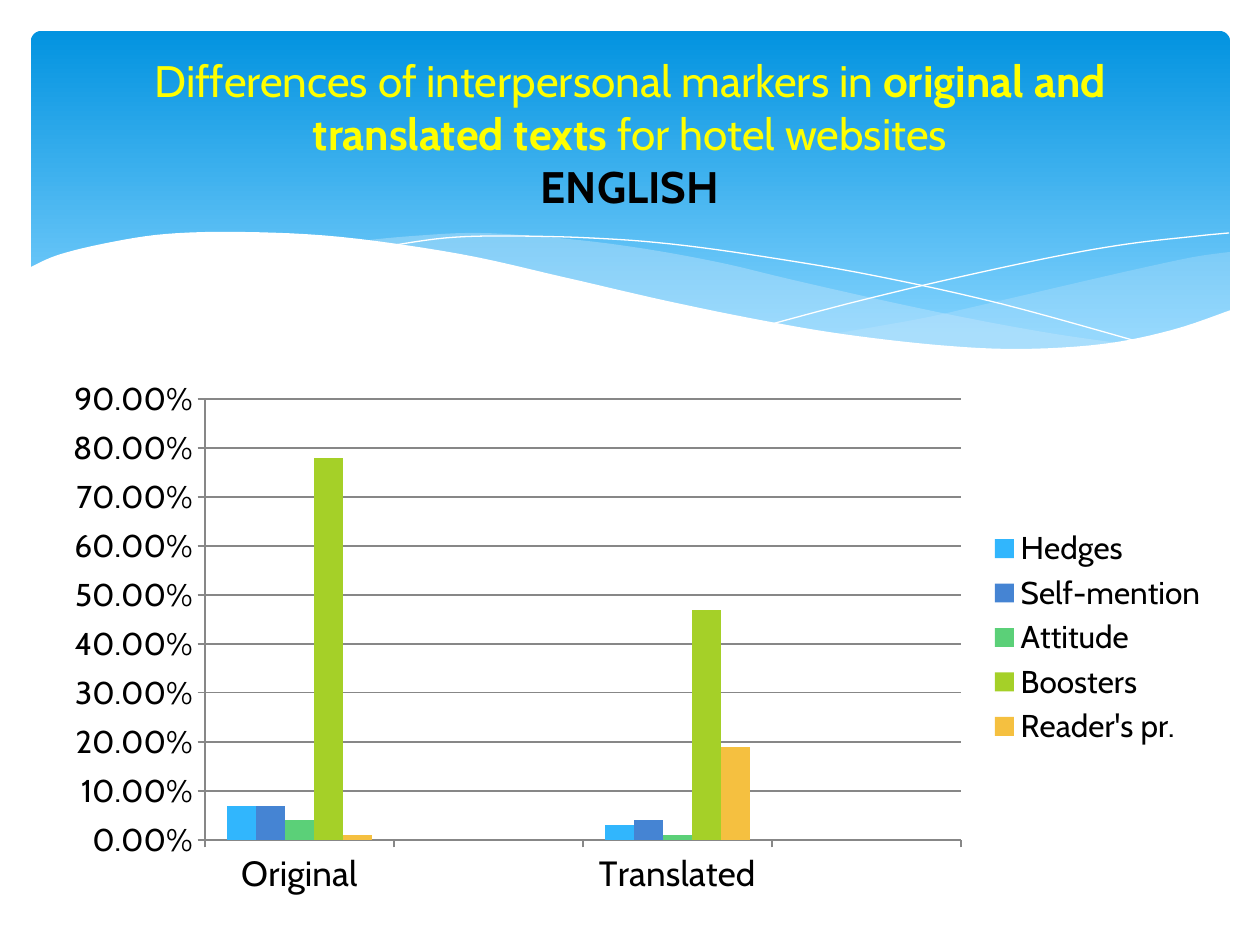
from lxml.etree import SubElement
from pptx import Presentation
from pptx.chart.data import CategoryChartData
from pptx.dml.color import RGBColor
from pptx.enum.chart import XL_CHART_TYPE as ChartType, XL_LEGEND_POSITION as LegendPosition
from pptx.enum.chart import XL_TICK_MARK as TickMark
from pptx.enum.shapes import MSO_SHAPE as Shape
from pptx.enum.text import MSO_ANCHOR as Anchor, MSO_AUTO_SIZE as AutoSize, PP_ALIGN as Align
from pptx.oxml import parse_xml
from pptx.oxml.ns import nsdecls, qn
from pptx.util import Pt

PX = 9144000 / 1260
FONT = "Cabin"
WHITE = RGBColor(0xFF, 0xFF, 0xFF)
BLACK = RGBColor(0, 0, 0)
YELLOW = RGBColor(0xFF, 0xFF, 0)
GREY = RGBColor(0x87, 0x87, 0x87)
BANNER_TOP = RGBColor(0x02, 0x93, 0xE0)
BANNER_BOTTOM = RGBColor(0x83, 0xD3, 0xFE)
PALE_BLUE = RGBColor(0xC6, 0xE7, 0xFC)
BLUE = RGBColor(0x31, 0xB6, 0xFD)
INDIGO = RGBColor(0x45, 0x84, 0xD3)
GREEN = RGBColor(0x5B, 0xD0, 0x78)
LIME = RGBColor(0xA5, 0xD0, 0x28)
AMBER = RGBColor(0xF5, 0xC0, 0x40)


def box(*lengths):
    return [round(length * PX) for length in lengths]


def smooth_curve(knots, steps=6):
    padded = [knots[0], *knots, knots[-1]]
    points = [knots[0]]
    for a, b, c, d in zip(padded, padded[1:], padded[2:], padded[3:]):
        for step in range(1, steps + 1):
            t = step / steps
            points.append(tuple(
                (2 * q + (r - p) * t + (2 * p - 5 * q + 4 * r - s) * t**2
                 + (3 * q - p - 3 * r + s) * t**3) / 2
                for p, q, r, s in zip(a, b, c, d)))
    return points


presentation = Presentation()
presentation.slide_width, presentation.slide_height = box(1260, 945)
slide = presentation.slides.add_slide(presentation.slide_layouts[5])
shapes = slide.shapes

banner = shapes.add_shape(Shape.ROUNDED_RECTANGLE, *box(31, 31, 1199, 340))
banner.adjustments[0] = 0.03
banner.shadow.inherit = False
banner.line.fill.background()
banner.fill.gradient()
banner.fill.gradient_angle = 270
for stop, color, position in zip(banner.fill.gradient_stops, (BANNER_TOP, BANNER_BOTTOM), (0, 0.9)):
    stop.color.rgb = color
    stop.position = position

right_top = [(833, 334), (919, 319), (982, 305), (1085, 281), (1142, 268), (1194, 257), (1230, 252)]
right_bottom = [(1230, 311), (1178, 330), (1130, 340), (1063, 349), (1012, 350),
                (939, 346), (871, 339), (833, 334)]
middle_top = [(360, 241), (413, 236), (479, 233), (557, 238), (633, 247), (717, 262),
              (793, 280), (890, 302), (977, 320), (1055, 334), (1125, 344)]
middle_bottom = [(1125, 344), (1056, 350), (989, 350), (910, 345), (819, 333), (713, 312),
                 (619, 292), (538, 272), (456, 256), (360, 241)]
falling_line = [(389, 246), (445, 238), (505, 236), (591, 238), (671, 244), (766, 257),
                (876, 276), (1002, 304), (1143, 343)]
rising_line = [(772, 324), (847, 304), (942, 281), (1053, 257), (1128, 244), (1198, 236), (1229, 233)]
front_top = [(29, 268), (58, 255), (107, 243), (166, 234), (243, 232), (341, 237), (460, 254),
             (563, 277), (667, 301), (760, 320), (842, 334), (937, 345), (1019, 349),
             (1103, 344), (1172, 330), (1231, 310)]

waves = [
    (smooth_curve(right_top) + smooth_curve(right_bottom), PALE_BLUE, 29),
    (smooth_curve(middle_top) + smooth_curve(middle_bottom), PALE_BLUE, 40),
    (smooth_curve(falling_line), None, 100),
    (smooth_curve(rising_line), None, 100),
    (smooth_curve(front_top) + [(1231, 414), (29, 414)], WHITE, 100),
]
for points, color, opacity in waves:
    start, *rest = [box(*point) for point in points]
    builder = shapes.build_freeform(*start)
    builder.add_line_segments(rest, close=color is not None)
    wave = builder.convert_to_shape()
    wave.shadow.inherit = False
    if color is None:
        wave.fill.background()
        wave.line.color.rgb = WHITE
        wave.line.width = Pt(0)
        continue
    wave.line.fill.background()
    wave.fill.solid()
    wave.fill.fore_color.rgb = color
    if opacity < 100:
        color_element = wave.element.spPr.find(qn("a:solidFill"))[0]
        SubElement(color_element, qn("a:alpha"), val=str(opacity * 1000))

chart_data = CategoryChartData(number_format="0.00%")
chart_data.categories = ["Original", "", "Translated", ""]
series_rows = [
    ("Hedges", 0.07, 0.03, BLUE),
    ("Self-mention", 0.07, 0.04, INDIGO),
    ("Attitude", 0.04, 0.01, GREEN),
    ("Boosters", 0.78, 0.47, LIME),
    ("Reader's pr.", 0.01, 0.19, AMBER),
]
for name, original, translated, color in series_rows:
    chart_data.add_series(name, [original, None, translated, None])
chart = shapes.add_chart(ChartType.COLUMN_CLUSTERED, *box(49, 369, 1172, 537), chart_data).chart
chart.has_title = False
chart.font.name = FONT
chart.font.size = Pt(18)
chart.font.color.rgb = BLACK
chart.has_legend = True
chart.legend.position = LegendPosition.RIGHT
chart.legend.include_in_layout = False

plot = chart.plots[0]
plot.vary_by_categories = False
plot.gap_width = 150
plot.overlap = 0
for series, row in zip(plot.series, series_rows):
    series.format.fill.solid()
    series.format.fill.fore_color.rgb = row[-1]
    series.invert_if_negative = False

value_axis = chart.value_axis
value_axis.minimum_scale = 0
value_axis.maximum_scale = 0.9
value_axis.major_unit = 0.1
value_axis.tick_labels.number_format = "0.00%"
value_axis.tick_labels.number_format_is_linked = False
value_axis.has_major_gridlines = True
value_axis.major_gridlines.format.line.color.rgb = GREY
chart.category_axis.tick_labels.font.size = Pt(20)
for axis in (value_axis, chart.category_axis):
    axis.major_tick_mark = TickMark.OUTSIDE
    axis.format.line.color.rgb = GREY

plot_area = chart.element.find(".//" + qn("c:plotArea"))
for layout in plot_area.findall(qn("c:layout")):
    plot_area.remove(layout)
plot_area.insert(0, parse_xml(
    f'<c:layout {nsdecls("c")}><c:manualLayout><c:layoutTarget val="inner"/>'
    f'<c:xMode val="edge"/><c:yMode val="edge"/><c:x val="{156 / 1172}"/><c:y val="{30 / 537}"/>'
    f'<c:w val="{756 / 1172}"/><c:h val="{441 / 537}"/></c:manualLayout></c:layout>'))

title = shapes.title
title.left, title.top, title.width, title.height = box(63, 46, 1134, 173)
title.element.getparent().append(title.element)
frame = title.text_frame
frame.word_wrap = True
frame.auto_size = AutoSize.NONE
frame.vertical_anchor = Anchor.MIDDLE
paragraph = frame.paragraphs[0]
paragraph.alignment = Align.CENTER
paragraph.font.name = FONT
paragraph.font.size = Pt(25.2)
for text, bold, color in [
    ("Differences of interpersonal markers in ", False, YELLOW),
    ("original and translated texts ", True, YELLOW),
    ("for hotel websites", False, YELLOW),
    ("ENGLISH", True, BLACK),
]:
    if color == BLACK:
        paragraph.add_line_break()
    run = paragraph.add_run()
    run.text = text
    run.font.bold = bold
    run.font.color.rgb = color

presentation.save("out.pptx")
